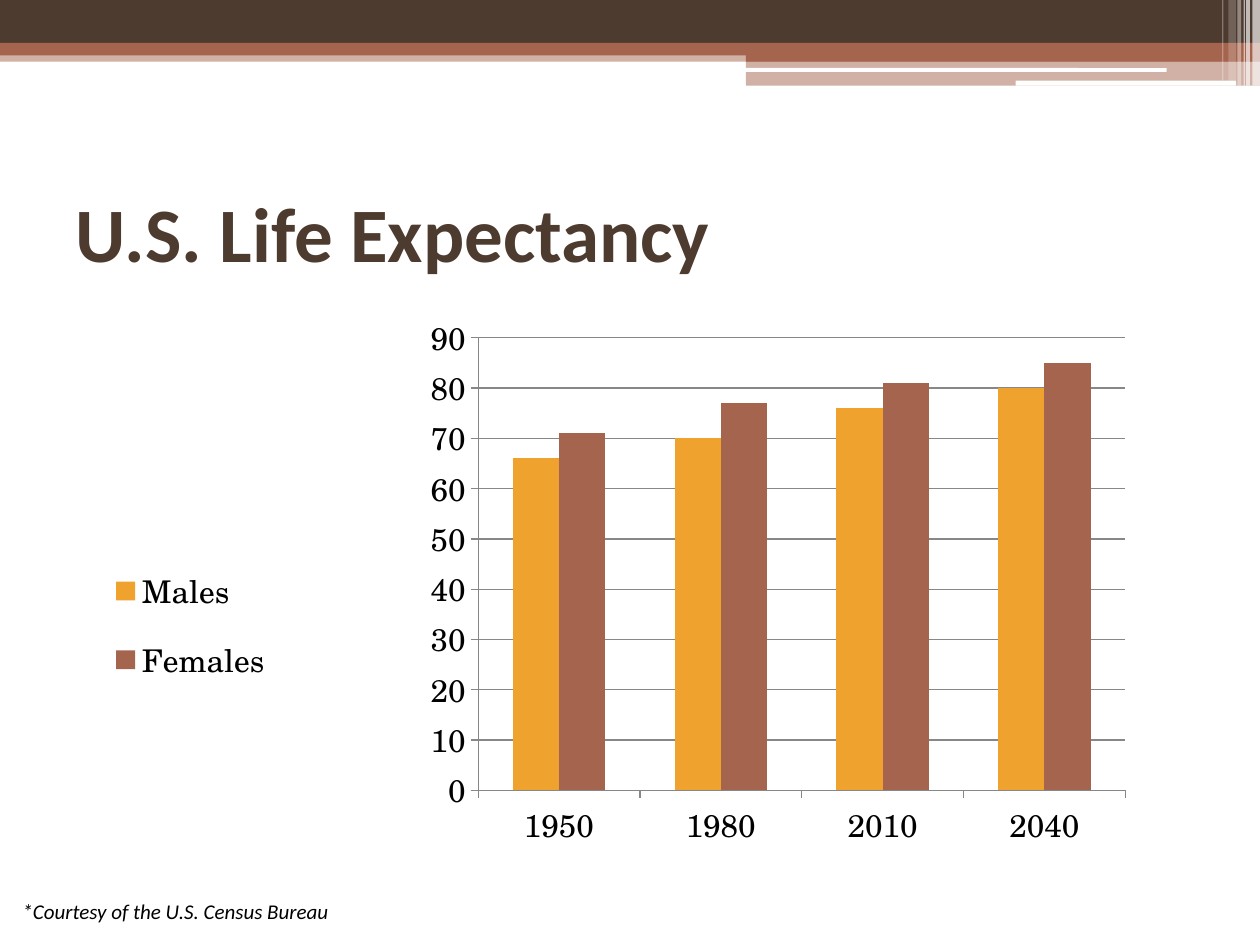
from lxml.etree import SubElement
from pptx import Presentation
from pptx.chart.data import CategoryChartData
from pptx.dml.color import RGBColor
from pptx.enum.chart import XL_CHART_TYPE, XL_LEGEND_POSITION, XL_TICK_MARK
from pptx.enum.shapes import MSO_SHAPE
from pptx.enum.text import MSO_ANCHOR, PP_ALIGN
from pptx.oxml import parse_xml
from pptx.oxml.ns import nsdecls, qn
from pptx.util import Inches, Pt

BROWN, RUST, AMBER = "4E3B30", "A5644E", "F0A22E"
WHITE, BLACK, GRAY = "FFFFFF", "000000", "878787"
SANS, SERIF = "Calibri", "TeX Gyre Schola"


def color(hex_code):
    return RGBColor.from_string(hex_code)


def inches(box):
    return [Inches(length) for length in box]


def write(frame, text, size, hex_code, font=SANS, bold=False, italic=False,
          anchor=MSO_ANCHOR.TOP):
    frame.word_wrap = True
    frame.vertical_anchor = anchor
    paragraph = frame.paragraphs[0]
    paragraph.alignment = PP_ALIGN.LEFT
    run = paragraph.add_run()
    run.text = text
    run.font.size, run.font.name = Pt(size), font
    run.font.bold, run.font.italic = bold, italic
    run.font.color.rgb = color(hex_code)


def add_bar(slide, box, hex_code, opacity=100, kind=MSO_SHAPE.RECTANGLE):
    bar = slide.shapes.add_shape(kind, *inches(box))
    bar.shadow.inherit = False
    bar.line.fill.background()
    bar.fill.solid()
    bar.fill.fore_color.rgb = color(hex_code)
    if opacity < 100:
        tint = bar.fill._xPr.find(qn("a:solidFill"))[0]
        SubElement(tint, qn("a:alpha")).set("val", str(opacity * 1000))


def add_banner(slide, box):
    """Layered bands, a stepped right half and fading stripes at the right edge."""
    left, top, width, height = box
    right = left + width
    step = left + 0.592 * width
    bands = [
        (left, 0.4, 0.09, RUST, 50),
        (left, 0, 0.34, BROWN, 100),
        (left, 0.34, 0.1, RUST, 100),
        (step, 0.39, 0.1, RUST, 100),
        (step, 0.48, 0.2, RUST, 50),
    ]
    for start, offset, depth, hex_code, opacity in bands:
        add_bar(slide, (start, top + offset, right - start, depth), hex_code, opacity)

    for start, offset, length, depth in [(5.91, 0.54, 3.35, 0.03), (8.06, 0.64, 1.75, 0.04)]:
        add_bar(slide, (left + start, top + offset, length, depth), WHITE,
                kind=MSO_SHAPE.ROUNDED_RECTANGLE)

    stripes = [(0.06, 0.06, height, 65), (0.11, 0.03, height, 65), (0.13, 0.01, height, 60),
               (0.18, 0.03, height, 40), (0.25, 0.06, 0.64, 20), (0.3, 0.01, 0.64, 30)]
    for inset, thickness, depth, opacity in stripes:
        add_bar(slide, (right - inset, top, thickness, depth), WHITE, opacity)


def add_title(slide, box, text):
    title = slide.shapes.title
    title.left, title.top, title.width, title.height = inches(box)
    write(title.text_frame, text, 44, BROWN, bold=True, anchor=MSO_ANCHOR.MIDDLE)


def add_source_note(slide, box, text):
    note = slide.shapes.add_textbox(*inches(box))
    write(note.text_frame, text, 12, BLACK, italic=True)


def set_layout(part, shares, inner=False):
    """Place a plot area or legend by its shares of the chart: x, y, w, h."""
    for old in part.findall(qn("c:layout")):
        part.remove(old)
    target = '<c:layoutTarget val="inner"/>' if inner else ""
    modes = '<c:xMode val="edge"/><c:yMode val="edge"/>'
    sizes = "".join(f'<c:{key} val="{share}"/>' for key, share in zip("xywh", shares))
    layout = parse_xml(f'<c:layout {nsdecls("c")}><c:manualLayout>{target}{modes}{sizes}'
                       "</c:manualLayout></c:layout>")
    part.insert(0 if inner else 1, layout)


def add_life_chart(slide, box):
    series_data = {"Males": ((66, 70, 76, 80), AMBER), "Females": ((71, 77, 81, 85), RUST)}
    data = CategoryChartData()
    data.categories = ["1950", "1980", "2010", "2040"]
    for name, (years, _) in series_data.items():
        data.add_series(name, years)
    chart = slide.shapes.add_chart(XL_CHART_TYPE.COLUMN_CLUSTERED, *inches(box), data).chart
    chart.has_title = False
    chart.font.size, chart.font.name = Pt(18), SERIF
    chart.font.color.rgb = color(BLACK)

    plot = chart.plots[0]
    plot.vary_by_categories = False
    plot.gap_width, plot.overlap = 150, 0
    for series, (_, hex_code) in zip(plot.series, series_data.values()):
        series.format.fill.solid()
        series.format.fill.fore_color.rgb = color(hex_code)

    ages = chart.value_axis
    ages.minimum_scale, ages.maximum_scale, ages.major_unit = 0, 90, 10
    ages.has_major_gridlines = True
    for axis in (chart.category_axis, ages):
        axis.major_tick_mark = XL_TICK_MARK.OUTSIDE
        axis.minor_tick_mark = XL_TICK_MARK.NONE
    for rule in (chart.category_axis.format, ages.format, ages.major_gridlines.format):
        rule.line.color.rgb = color(GRAY)
        rule.line.width = Pt(0.75)

    chart.has_legend = True
    chart.legend.position = XL_LEGEND_POSITION.RIGHT
    chart.legend.include_in_layout = False
    set_layout(chart.legend._element, (0.05, 0.41, 0.17, 0.29))
    set_layout(plot._element.getparent(), (0.396, 0.036, 0.587, 0.817), inner=True)


def main():
    deck = Presentation()
    deck.slide_width, deck.slide_height = inches((10, 7.5))
    slide = deck.slides.add_slide(deck.slide_layouts[5])
    add_banner(slide, (0, 0, 10, 0.68))
    add_title(slide, (0.5, 1.25, 9, 1.17), "U.S. Life Expectancy")
    add_life_chart(slide, (0.33, 2.5, 8.75, 4.42))
    add_source_note(slide, (0.08, 7.08, 4.25, 0.3), "*Courtesy of the U.S. Census Bureau")
    deck.save("out.pptx")


if __name__ == "__main__":
    main()
